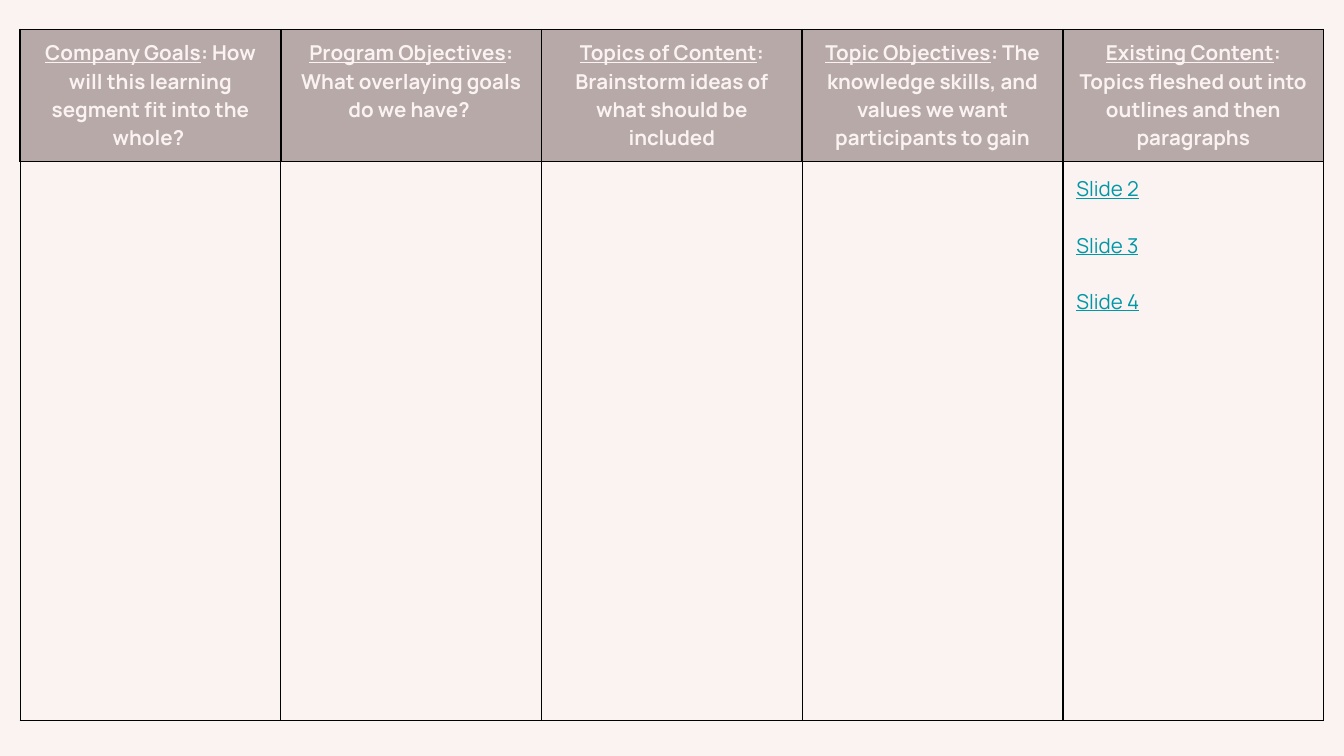
from lxml.etree import SubElement
from pptx import Presentation
from pptx.dml.color import RGBColor
from pptx.enum.text import PP_ALIGN
from pptx.oxml.ns import qn
from pptx.util import Inches, Pt

HEADINGS = [
    ("Company Goals", ": How will this learning segment fit into the whole? "),
    ("Program Objectives", ": What overlaying goals do we have? "),
    ("Topics of Content", ": Brainstorm ideas of what should be included"),
    ("Topic Objectives", ": The knowledge skills, and values we want participants to gain"),
    ("Existing Content", ": Topics fleshed out into outlines and then paragraphs"),
]
SLIDE_REFERENCES = ["Slide 2", "Slide 3", "Slide 4"]


def color(value):
    return RGBColor.from_string(value)


class PlanningPage:
    font = "Manrope"
    size = Pt(11)
    paper = "FAF3F1"
    header_fill = "B6A9A8"
    reference_color = "0097A7"
    border_color = "000000"

    def __init__(self, deck):
        self.slide = deck.slides.add_slide(deck.slide_layouts[6])
        background = self.slide.background.fill
        background.solid()
        background.fore_color.rgb = color(self.paper)

    def add_table(self, left, top, column_width, row_heights, column_count):
        frame = self.slide.shapes.add_table(
            len(row_heights), column_count, Inches(left), Inches(top),
            Inches(column_width * column_count), Inches(sum(row_heights)))
        table = frame.table
        table.first_row = False
        table.horz_banding = False
        for column in table.columns:
            column.width = Inches(column_width)
        for row, height in zip(table.rows, row_heights):
            row.height = Inches(height)
        return table

    def add_run(self, para, text, text_color, bold=False, underline=False):
        span = para.add_run()
        span.text = text
        span.font.name = self.font
        span.font.size = self.size
        span.font.bold = bold
        span.font.underline = underline
        span.font.color.rgb = color(text_color)

    def set_margins(self, cell, margin):
        cell.margin_left = cell.margin_right = Inches(margin)
        cell.margin_top = cell.margin_bottom = Inches(margin)

    def set_borders(self, cell, side_width, top_width, bottom_width):
        """Draw the four cell borders, with widths in points."""
        properties = cell._tc.get_or_add_tcPr()
        widths = {"L": side_width, "R": side_width, "T": top_width, "B": bottom_width}
        for side, width in widths.items():
            line = SubElement(properties, qn(f"a:ln{side}"), w=str(Pt(width)))
            fill = SubElement(line, qn("a:solidFill"))
            SubElement(fill, qn("a:srgbClr"), val=self.border_color)

    def fill_header(self, cell, title, question):
        self.set_margins(cell, 0.07)
        self.set_borders(cell, 1, 1, 1)
        cell.fill.solid()
        cell.fill.fore_color.rgb = color(self.header_fill)
        para = cell.text_frame.paragraphs[0]
        para.alignment = PP_ALIGN.CENTER
        self.add_run(para, title, self.paper, bold=True, underline=True)
        self.add_run(para, question, self.paper, bold=True)

    def fill_body(self, cell, references=()):
        self.set_margins(cell, 0.1)
        self.set_borders(cell, 0.75, 1, 0.75)
        cell.fill.background()
        for index, reference in enumerate(references):
            if index == 0:
                para = cell.text_frame.paragraphs[0]
            else:
                para = cell.text_frame.add_paragraph()
                para.space_before = Pt(15)
            self.add_run(para, reference, self.reference_color, underline=True)


def main():
    deck = Presentation()
    deck.slide_width = Inches(10)
    deck.slide_height = deck.slide_width * 9 // 16
    page = PlanningPage(deck)
    last = len(HEADINGS) - 1
    table = page.add_table(0.15, 0.22, 1.94, [0.93, 4.16], len(HEADINGS))
    for index, (title, question) in enumerate(HEADINGS):
        page.fill_header(table.cell(0, index), title, question)
        page.fill_body(table.cell(1, index), SLIDE_REFERENCES if index == last else ())
    deck.save("out.pptx")


if __name__ == "__main__":
    main()
